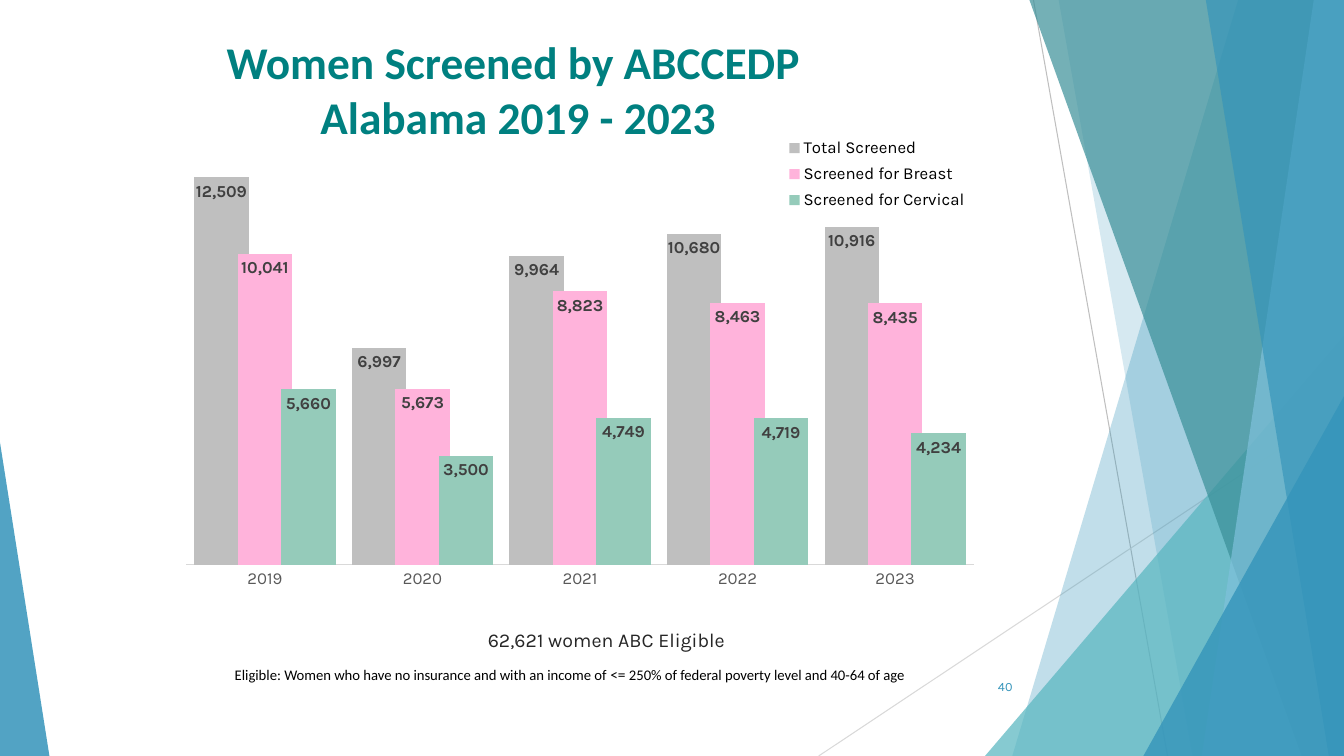
from lxml.etree import SubElement
from pptx import Presentation
from pptx.chart.data import CategoryChartData
from pptx.dml.color import RGBColor
from pptx.enum.chart import (XL_CHART_TYPE, XL_LABEL_POSITION as LabelPosition,
                             XL_LEGEND_POSITION as LegendPosition, XL_TICK_MARK as TickMark)
from pptx.enum.shapes import MSO_CONNECTOR, MSO_SHAPE
from pptx.enum.text import MSO_ANCHOR as Anchor, MSO_AUTO_SIZE as AutoSize, PP_ALIGN as Align
from pptx.oxml import parse_xml
from pptx.oxml.ns import nsdecls, qn
from pptx.util import Inches, Pt

WIDTH, HEIGHT = 13.33, 7.5
BLUE, TEAL, DARK_TEAL, PALE_BLUE = "3494BA", "58B6C0", "3A8F98", "7FC1DB"
YEARS = ["2019", "2020", "2021", "2022", "2023"]
SCREENED = [
    ("Total Screened", "BFBFBF", [12509, 6997, 9964, 10680, 10916]),
    ("Screened for Breast", "FFB3DB", [10041, 5673, 8823, 8463, 8435]),
    ("Screened for Cervical", "95CBBA", [5660, 3500, 4749, 4719, 4234]),
]


def color(value):
    return RGBColor.from_string(value)


def style_font(font, name, size, value, bold=False):
    font.name, font.size, font.bold = name, Pt(size), bold
    font.color.rgb = color(value)


def paint(shape, value, opacity):
    shape.shadow.inherit = False
    shape.fill.solid()
    shape.fill.fore_color.rgb = color(value)
    shape.line.fill.background()
    rgb = shape._element.spPr.find(qn("a:solidFill"))[0]
    SubElement(rgb, qn("a:alpha")).set("val", str(opacity * 1000))


def add_ray(slide, start, end, value):
    ray = slide.shapes.add_connector(MSO_CONNECTOR.STRAIGHT, *map(Inches, start + end))
    ray.line.color.rgb = color(value)
    ray.line.width = Pt(0.75)
    SubElement(ray._element.spPr, qn("a:effectLst"))


def add_pane(slide, top_left, bottom_left, value, opacity):
    builder = slide.shapes.build_freeform(Inches(top_left), 0)
    corners = [(WIDTH, 0), (WIDTH, HEIGHT), (bottom_left, HEIGHT)]
    builder.add_line_segments([(Inches(x), Inches(y)) for x, y in corners])
    paint(builder.convert_to_shape(), value, opacity)


def add_wedge(slide, left, top, width, apex, value, opacity):
    wedge = slide.shapes.add_shape(MSO_SHAPE.ISOSCELES_TRIANGLE, Inches(left), Inches(top),
                                   Inches(width), Inches(HEIGHT - top))
    wedge.adjustments[0] = apex
    paint(wedge, value, opacity)


def add_facets(slide):
    add_ray(slide, (10.25, 0), (11.58, HEIGHT), "BFBFBF")
    add_ray(slide, (WIDTH, 4.03), (8.12, HEIGHT), "D9D9D9")
    add_pane(slide, 12.28, 10.04, BLUE, 30)
    add_pane(slide, 10.5, 11.83, BLUE, 20)
    add_wedge(slide, 9.77, 3.33, 3.56, 1, TEAL, 72)
    add_pane(slide, 10.21, 12.91, DARK_TEAL, 70)
    add_pane(slide, 13.03, 11.92, PALE_BLUE, 70)
    add_pane(slide, 11.96, 13.18, BLUE, 65)
    add_wedge(slide, 11.34, 3.93, 1.99, 1, BLUE, 80)
    add_wedge(slide, 0, 4.39, 0.49, 0, BLUE, 85)


def add_title(slide, left, top, width, height):
    title = slide.shapes.title
    title.left, title.top, title.width, title.height = map(Inches, (left, top, width, height))
    frame = title.text_frame
    frame.text = "Women Screened by ABCCEDP\v Alabama 2019 - 2023"
    frame.auto_size = AutoSize.NONE
    frame.vertical_anchor = Anchor.TOP
    frame.margin_top = Inches(0.07)
    paragraph = frame.paragraphs[0]
    paragraph.alignment = Align.CENTER
    for run in paragraph.runs:
        style_font(run.font, "Calibri", 32.4, "008080", True)


def set_layout(element, x, y, width, height, inner=False):
    target = '<c:layoutTarget val="inner"/>' if inner else ""
    sizes = "".join(f'<c:{tag} val="{value}"/>'
                    for tag, value in zip("xywh", (x, y, width, height)))
    return parse_xml(f'<c:layout {nsdecls("c")}><c:manualLayout>{target}'
                     f'<c:xMode val="edge"/><c:yMode val="edge"/>{sizes}'
                     '</c:manualLayout></c:layout>')


def place(element, layout, before):
    for old in element.findall(qn("c:layout")):
        element.remove(old)
    element.insert(before, layout)


def add_screening_chart(slide, left, top, width, height):
    data = CategoryChartData(number_format="#,##0")
    data.categories = YEARS
    for name, _, values in SCREENED:
        data.add_series(name, values)
    chart = slide.shapes.add_chart(XL_CHART_TYPE.COLUMN_CLUSTERED, Inches(left), Inches(top),
                                   Inches(width), Inches(height), data).chart
    style_font(chart.font, "Karla", 10, "000000")
    chart.has_title = False
    chart.has_legend = True
    chart.legend.position = LegendPosition.RIGHT
    chart.legend.include_in_layout = False
    style_font(chart.legend.font, "Karla", 12, "000000")
    place(chart.legend._element, set_layout(chart.legend, 0.74, 0.01, 0.24, 0.16), 1)
    plot_area = chart._chartSpace.chart.plotArea
    place(plot_area, set_layout(plot_area, 0.012, 0.008, 0.967, 0.827, True), 0)

    value_axis = chart.value_axis
    value_axis.minimum_scale, value_axis.maximum_scale = 0, 14000
    value_axis.has_major_gridlines = False
    value_axis.visible = False
    category_axis = chart.category_axis
    category_axis.major_tick_mark = TickMark.NONE
    category_axis.format.line.color.rgb = color("D9D9D9")
    category_axis.format.line.width = Pt(0.75)
    style_font(category_axis.tick_labels.font, "Karla", 12, "595959")

    plot = chart.plots[0]
    plot.vary_by_categories = False
    plot.gap_width, plot.overlap = 30, 20
    for series, (_, value, _) in zip(plot.series, SCREENED):
        series.format.fill.solid()
        series.format.fill.fore_color.rgb = color(value)
        labels = series.data_labels
        labels.show_value = True
        labels.position = LabelPosition.INSIDE_END
        labels.number_format, labels.number_format_is_linked = "#,##0", False
        style_font(labels.font, "Karla", 12, "404040", True)


def add_text(slide, box, pieces, name, value, alignment, anchor=Anchor.TOP):
    frame = slide.shapes.add_textbox(*map(Inches, box)).text_frame
    frame.word_wrap = True
    frame.vertical_anchor = anchor
    paragraph = frame.paragraphs[0]
    paragraph.alignment = alignment
    for text, size in pieces:
        run = paragraph.add_run()
        run.text = text
        style_font(run.font, name, size, value)


def add_notes_below(slide, left, top):
    add_text(slide, (left + 7.16, top + 0.43, 0.75, 0.4), [("40", 9)],
             "Karla", BLUE, Align.RIGHT, Anchor.MIDDLE)
    add_text(slide, (left + 1.91, top, 3.75, 0.54), [("62,621 women ABC Eligible", 14)],
             "Karla", "262626", Align.CENTER)
    eligibility = [
        ("Eligible: Women who have no insurance and with an income of ", 10.5),
        ("<=", 11),
        (" 250% of federal poverty level and 40-64 of age", 10.5),
    ]
    add_text(slide, (left, top + 0.37, 9.53, 0.29), eligibility,
             "Calibri", "000000", Align.LEFT)


def main():
    presentation = Presentation()
    presentation.slide_width, presentation.slide_height = Inches(WIDTH), Inches(HEIGHT)
    slide = presentation.slides.add_slide(presentation.slide_layouts[5])
    add_facets(slide)
    add_title(slide, 0, 0.27, 10.18, 1.44)
    add_screening_chart(slide, 1.75, 1.26, 8.08, 5.2)
    add_notes_below(slide, 2.23, 6.18)
    presentation.save("out.pptx")


if __name__ == "__main__":
    main()
